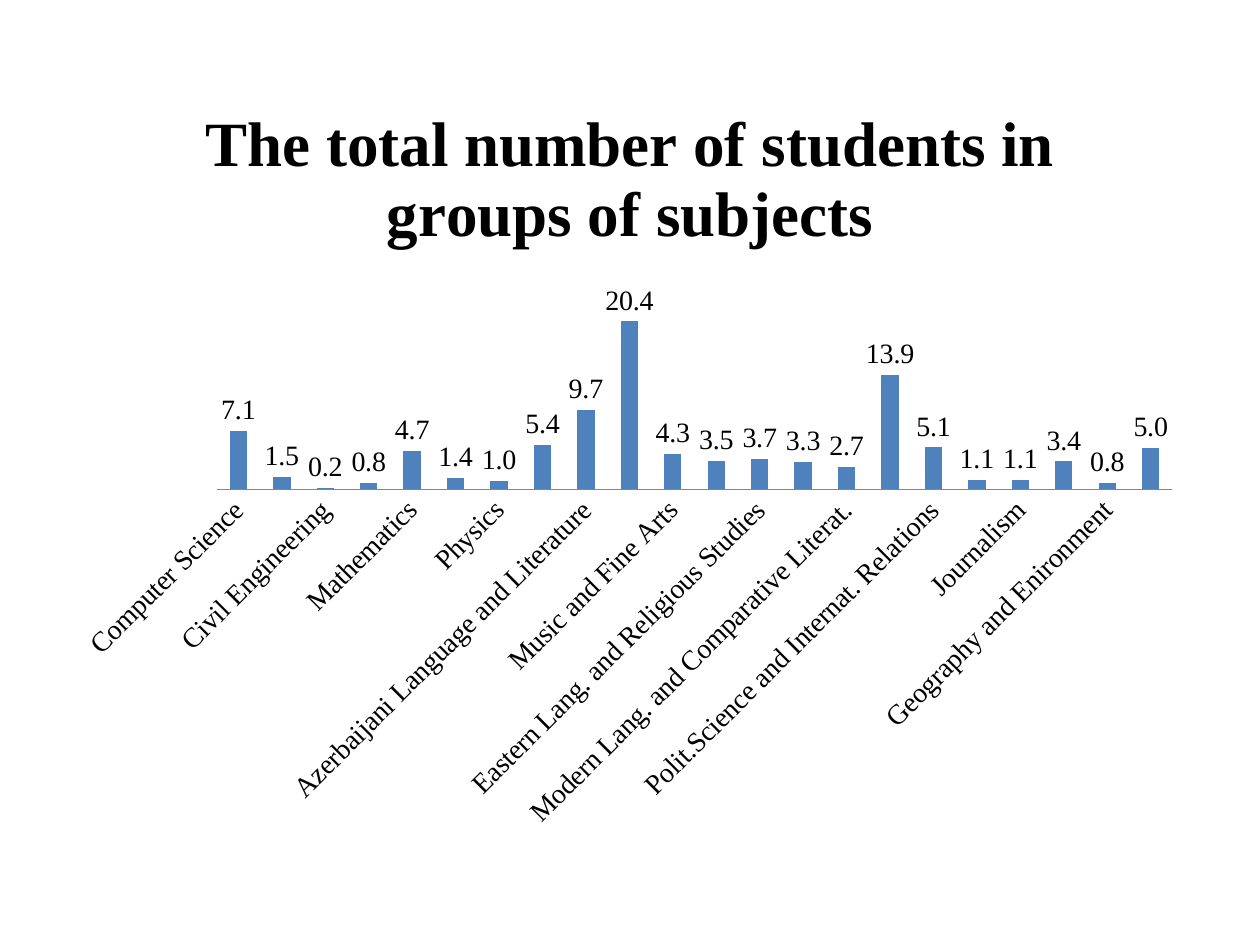
from pptx import Presentation
from pptx.chart.data import CategoryChartData as ChartData
from pptx.dml.color import RGBColor as RGB
from pptx.enum.chart import XL_CHART_TYPE as Kind
from pptx.enum.chart import XL_LABEL_POSITION as Spot
from pptx.enum.chart import XL_TICK_MARK as Tick
from pptx.util import Emu, Pt

BLACK = RGB(0x00, 0x00, 0x00)
BLUE = RGB(0x4F, 0x81, 0xBD)
GREY = RGB(0x86, 0x86, 0x86)
SERIF = "Times New Roman"

SHARES = {
    "Computer Science": 7.1,
    "Petroleum Engineering": 1.5,
    "Civil Engineering": 0.2,
    "Electron., Telecom.and Radio Eng.": 0.8,
    "Mathematics": 4.7,
    "Chemistry": 1.4,
    "Physics": 1.0,
    "History and Archaeology": 5.4,
    "Azerbaijani Language and Literature": 9.7,
    "English Language and Literature": 20.4,
    "Music and Fine Arts": 4.3,
    "Law": 3.5,
    "Eastern Lang. and Religious Studies": 3.7,
    "Biological Sciences": 3.3,
    "Modern Lang. and Comparative Literat.": 2.7,
    "Economics and Management": 13.9,
    "Polit.Science and Internat. Relations": 5.1,
    "Philosophy and Human Studies": 1.1,
    "Journalism": 1.1,
    "Education": 3.4,
    "Geography and Enironment": 0.8,
    "Psychology": 5.0,
}


def px(n):
    return Emu(round(n * 914400 / 126))


def style(font, size, name=SERIF, bold=False):
    font.name = name
    font.size = Pt(size)
    font.bold = bold
    font.color.rgb = BLACK


def add_title(chart, text):
    chart.has_title = True
    frame = chart.chart_title.text_frame
    frame.text = text
    style(frame.paragraphs[0].font, 36, bold=True)
    chart.chart_title.include_in_layout = False


def set_axes(chart):
    cats = chart.category_axis
    cats.major_tick_mark = cats.minor_tick_mark = Tick.NONE
    cats.format.line.color.rgb = GREY
    style(cats.tick_labels.font, 16)
    vals = chart.value_axis
    vals.has_major_gridlines = False
    vals.visible = False


def set_bars(plot):
    plot.gap_width = 150
    plot.overlap = -25
    plot.vary_by_categories = False
    fill = plot.series[0].format.fill
    fill.solid()
    fill.fore_color.rgb = BLUE
    plot.has_data_labels = True
    labels = plot.data_labels
    labels.show_value = True
    labels.number_format = "0.0"
    labels.number_format_is_linked = False
    labels.position = Spot.OUTSIDE_END
    style(labels.font, 16)


def add_chart(slide, x, y, w, h):
    data = ChartData(number_format="0.0")
    data.categories = list(SHARES)
    data.add_series("Series 1", list(SHARES.values()))
    box = [px(n) for n in (x, y, w, h)]
    chart = slide.shapes.add_chart(Kind.COLUMN_CLUSTERED, *box, data).chart
    style(chart.font, 10, "Calibri")
    chart.has_legend = False
    add_title(chart, "The total number of students in groups of subjects")
    set_axes(chart)
    set_bars(chart.plots[0])


def main():
    deck = Presentation()
    deck.slide_width, deck.slide_height = px(1260), px(945)
    slide = deck.slides.add_slide(deck.slide_layouts[6])
    add_chart(slide, 63, 69, 1134, 775)
    deck.save("out.pptx")


if __name__ == "__main__":
    main()
